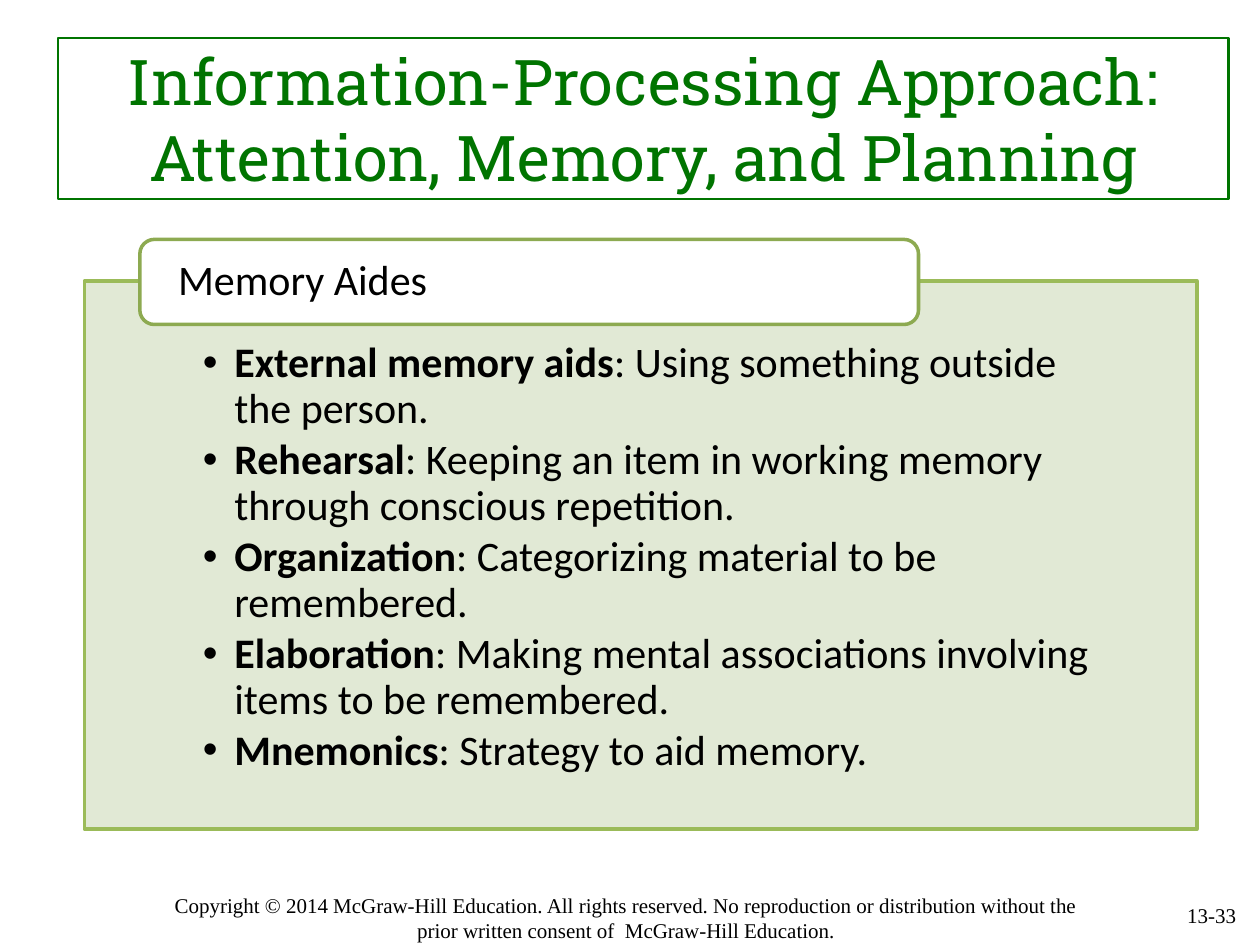
from dataclasses import dataclass

from lxml import etree
from pptx import Presentation
from pptx.dml.color import RGBColor
from pptx.enum.shapes import MSO_SHAPE
from pptx.enum.text import MSO_ANCHOR, PP_ALIGN
from pptx.oxml.ns import qn
from pptx.util import Pt

RECTANGLE, ROUNDED = MSO_SHAPE.RECTANGLE, MSO_SHAPE.ROUNDED_RECTANGLE
TOP, MIDDLE = MSO_ANCHOR.TOP, MSO_ANCHOR.MIDDLE
LEFT, CENTER, RIGHT = PP_ALIGN.LEFT, PP_ALIGN.CENTER, PP_ALIGN.RIGHT


@dataclass(frozen=True)
class Theme:
    title_green: RGBColor = RGBColor(0x00, 0x74, 0x00)
    panel_fill: RGBColor = RGBColor(0xDE, 0xE7, 0xD1)
    panel_line: RGBColor = RGBColor(0x9B, 0xBB, 0x59)
    heading_line: RGBColor = RGBColor(0x8D, 0xAA, 0x51)
    white: RGBColor = RGBColor(0xFF, 0xFF, 0xFF)
    black: RGBColor = RGBColor(0x00, 0x00, 0x00)
    title_font: str = "Roboto Slab"
    body_font: str = "Calibri"
    footer_font: str = "Times New Roman"
    title_size: Pt = Pt(36)
    body_size: Pt = Pt(24)
    footer_size: Pt = Pt(12)


theme = Theme()


def add_box(kind, bounds, fill, line, line_width, anchor, margins):
    left, top, width, height = map(Pt, bounds)
    if kind is None:
        box = slide.shapes.add_textbox(left, top, width, height)
    else:
        box = slide.shapes.add_shape(kind, left, top, width, height)
        box.shadow.inherit = False
        if fill is None:
            box.fill.background()
        else:
            box.fill.solid()
            box.fill.fore_color.rgb = fill
        box.line.color.rgb = line
        box.line.width = Pt(line_width)
    frame = box.text_frame
    frame.word_wrap = True
    frame.vertical_anchor = anchor
    frame.margin_left, frame.margin_top, frame.margin_right, frame.margin_bottom = map(Pt, margins)
    return box


def add_run(paragraph, text, font, size, color, bold=False):
    run = paragraph.add_run()
    run.text = text
    run.font.name = font
    run.font.size = size
    run.font.color.rgb = color
    run.font.bold = bold


prs = Presentation()
prs.slide_width, prs.slide_height = Pt(720), Pt(540)
slide = prs.slides.add_slide(prs.slide_layouts[6])

footers = [
    ((91.44, 509.76, 532.8, 28.8), TOP, (0, 0, 0, 0), CENTER,
     "Copyright © 2014 McGraw-Hill Education. All rights reserved. No reproduction or "
     "distribution without the prior written consent of  McGraw-Hill Education."),
    ((545.76, 508.32, 167.76, 28.8), MIDDLE, (7.2, 3.6, 7.2, 3.6), RIGHT, "13-33"),
]
for bounds, anchor, margins, alignment, text in footers:
    footer = add_box(None, bounds, None, None, 0, anchor, margins)
    line = footer.text_frame.paragraphs[0]
    line.alignment = alignment
    add_run(line, text, theme.footer_font, theme.footer_size, theme.black)

title = add_box(RECTANGLE, (33.12, 21.6, 668.88, 92.16), None, theme.title_green, 1.25,
                MIDDLE, (7.2, 3.6, 7.2, 3.6))
title_line = title.text_frame.paragraphs[0]
title_line.alignment = CENTER
add_run(title_line, "Information-Processing Approach: Attention, Memory, and Planning",
        theme.title_font, theme.title_size, theme.title_green)

panel = add_box(RECTANGLE, (48.24, 160.56, 635.76, 313.2), theme.panel_fill, theme.panel_line, 2,
                TOP, (49.68, 34.56, 49.68, 12.24))
panel_color = panel.fill._xPr.find(qn("a:solidFill"))[0]
etree.SubElement(panel_color, qn("a:alpha"), val="90000")

memory_aids = [
    ("External memory aids", "Using something outside the person."),
    ("Rehearsal", "Keeping an item in working memory through conscious repetition."),
    ("Organization", "Categorizing material to be remembered."),
    ("Elaboration", "Making mental associations involving items to be remembered."),
    ("Mnemonics", "Strategy to aid memory."),
]
for index, (aid, meaning) in enumerate(memory_aids):
    frame = panel.text_frame
    item = frame.paragraphs[0] if index == 0 else frame.add_paragraph()
    properties = item._p.get_or_add_pPr()
    properties.set("marL", str(Pt(36)))
    properties.set("indent", str(Pt(-18)))
    etree.SubElement(properties, qn("a:buFont"), typeface="Arial")
    etree.SubElement(properties, qn("a:buChar"), char="•")
    item.alignment = LEFT
    item.line_spacing = 0.9
    item.space_after = Pt(3.6)
    add_run(item, aid, theme.body_font, theme.body_size, theme.black, bold=True)
    add_run(item, f": {meaning}", theme.body_font, theme.body_size, theme.black)

heading = add_box(ROUNDED, (79.92, 136.8, 444.96, 48.6), theme.white, theme.heading_line, 2,
                  MIDDLE, (19.44, 2.16, 19.44, 2.16))
heading.adjustments[0] = 0.17
heading_line = heading.text_frame.paragraphs[0]
heading_line.alignment = LEFT
heading_line.line_spacing = 0.9
add_run(heading_line, "Memory Aides", theme.body_font, theme.body_size, theme.black)

prs.save("out.pptx")
